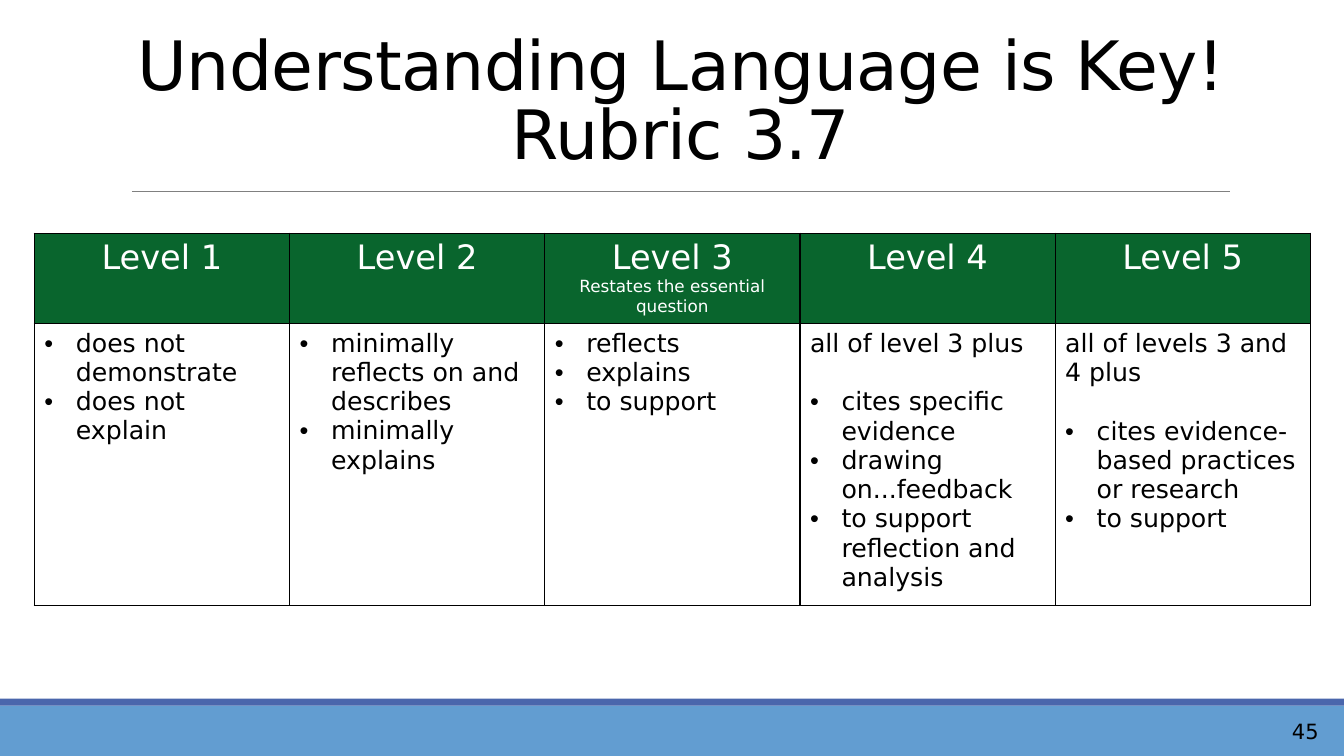
from dataclasses import dataclass

from lxml import etree
from pptx import Presentation
from pptx.dml.color import RGBColor
from pptx.enum.shapes import MSO_CONNECTOR, MSO_SHAPE
from pptx.enum.text import MSO_ANCHOR, PP_ALIGN
from pptx.oxml.ns import qn
from pptx.slide import Slide
from pptx.table import _Cell
from pptx.text.text import TextFrame, _Paragraph
from pptx.util import Pt

LEFT, CENTER, RIGHT = PP_ALIGN.LEFT, PP_ALIGN.CENTER, PP_ALIGN.RIGHT
MIDDLE, BOTTOM = MSO_ANCHOR.MIDDLE, MSO_ANCHOR.BOTTOM
RECTANGLE, STRAIGHT = MSO_SHAPE.RECTANGLE, MSO_CONNECTOR.STRAIGHT

FONT = "DejaVu Sans"
COLORS = {
    "text": "000000",
    "header_text": "FFFFFF",
    "header": "09652D",
    "border": "000000",
    "rule": "808080",
    "footer": "629DD1",
    "footer_edge": "4A66AC",
}
SLIDE_WIDTH, SLIDE_HEIGHT = 960, 540
TABLE_LEFT, TABLE_TOP = 24.5, 166.5
COLUMN_WIDTH = 182.3
ROW_HEIGHTS = (63, 195.5)
BULLET_INDENT = 22.5
BODY_LINE = 21


@dataclass(frozen=True)
class Box:
    left: float
    top: float
    width: float
    height: float

    def emu(self) -> tuple[Pt, Pt, Pt, Pt]:
        return Pt(self.left), Pt(self.top), Pt(self.width), Pt(self.height)


@dataclass(frozen=True)
class Level:
    heading: str
    bullets: tuple[str, ...]
    lead: str = ""
    note: str = ""


@dataclass(frozen=True)
class Band:
    box: Box
    color: str


BANDS = (
    Band(Box(0, 504, SLIDE_WIDTH, 36), "footer"),
    Band(Box(0, 499, SLIDE_WIDTH, 5), "footer_edge"),
)
LEVELS = (
    Level("Level 1", ("does not demonstrate", "does not explain")),
    Level("Level 2", ("minimally reflects on and describes", "minimally explains")),
    Level("Level 3", ("reflects", "explains", "to support"),
          note="Restates the essential question"),
    Level("Level 4", ("cites specific evidence", "drawing on...feedback",
                      "to support reflection and analysis"),
          lead="all of level 3 plus"),
    Level("Level 5", ("cites evidence-based practices or research", "to support"),
          lead="all of levels 3 and 4 plus"),
)


def rgb(color: str) -> RGBColor:
    return RGBColor.from_string(COLORS[color])


def write(frame: TextFrame, text: str, *, size: float = 18, color: str = "text",
          align: PP_ALIGN = LEFT, bullet: bool = False, line_spacing: float = 1.0,
          space_after: float = 0, tracking: float = 0) -> None:
    first: _Paragraph = frame.paragraphs[0]
    paragraph = frame.add_paragraph() if first.runs else first
    paragraph.text = text
    paragraph.alignment = align
    paragraph.line_spacing = line_spacing
    paragraph.space_after = Pt(space_after)
    for run in paragraph.runs:
        run.font.name = FONT
        run.font.size = Pt(size)
        run.font.color.rgb = rgb(color)
        if tracking:
            run._r.get_or_add_rPr().set("spc", str(round(tracking * 100)))
    if bullet:
        properties = paragraph._p.get_or_add_pPr()
        properties.set("marL", str(Pt(BULLET_INDENT)))
        properties.set("indent", str(-Pt(BULLET_INDENT)))
        etree.SubElement(properties, qn("a:buFont"), typeface="Arial")
        etree.SubElement(properties, qn("a:buChar"), char="•")


def add_text_frame(slide: Slide, box: Box, anchor: MSO_ANCHOR) -> TextFrame:
    frame = slide.shapes.add_textbox(*box.emu()).text_frame
    frame.word_wrap = True
    frame.vertical_anchor = anchor
    return frame


def draw_band(slide: Slide, band: Band) -> None:
    strip = slide.shapes.add_shape(RECTANGLE, *band.box.emu())
    strip.shadow.inherit = False
    strip.fill.solid()
    strip.fill.fore_color.rgb = rgb(band.color)
    strip.line.fill.background()


def draw_title_rule(slide: Slide) -> None:
    rule = slide.shapes.add_connector(STRAIGHT, Pt(94.3), Pt(136.8), Pt(878.8), Pt(136.8))
    rule.line.color.rgb = rgb("rule")
    rule.line.width = Pt(0.5)
    etree.SubElement(rule._element.spPr, qn("a:effectLst"))


def draw_borders(cell: _Cell) -> None:
    properties = cell._tc.get_or_add_tcPr()
    for side in ("lnL", "lnR", "lnT", "lnB"):
        border = etree.SubElement(properties, qn(f"a:{side}"), w=str(Pt(1)))
        fill = etree.SubElement(border, qn("a:solidFill"))
        etree.SubElement(fill, qn("a:srgbClr"), val=COLORS["border"])


def fill_level(heading: _Cell, criteria: _Cell, level: Level) -> None:
    draw_borders(heading)
    draw_borders(criteria)
    heading.fill.solid()
    heading.fill.fore_color.rgb = rgb("header")
    criteria.fill.background()
    write(heading.text_frame, level.heading, size=24, color="header_text", align=CENTER)
    if level.note:
        write(heading.text_frame, level.note, size=12, color="header_text", align=CENTER)
    if level.lead:
        write(criteria.text_frame, level.lead, space_after=BODY_LINE)
    for criterion in level.bullets:
        write(criteria.text_frame, criterion, bullet=True)


def draw_rubric(slide: Slide) -> None:
    box = Box(TABLE_LEFT, TABLE_TOP, COLUMN_WIDTH * len(LEVELS), sum(ROW_HEIGHTS))
    rubric = slide.shapes.add_table(len(ROW_HEIGHTS), len(LEVELS), *box.emu()).table
    rubric.first_row = False
    rubric.horz_banding = False
    for row, height in zip(rubric.rows, ROW_HEIGHTS):
        row.height = Pt(height)
    for index, level in enumerate(LEVELS):
        rubric.columns[index].width = Pt(COLUMN_WIDTH)
        fill_level(rubric.cell(0, index), rubric.cell(1, index), level)


def main() -> None:
    presentation = Presentation()
    presentation.slide_width = Pt(SLIDE_WIDTH)
    presentation.slide_height = Pt(SLIDE_HEIGHT)
    slide = presentation.slides.add_slide(presentation.slide_layouts[6])
    for band in BANDS:
        draw_band(slide, band)
    draw_title_rule(slide)
    title = add_text_frame(slide, Box(24.5, 22.3, 923.8, 105.1), BOTTOM)
    write(title, "Understanding Language is Key!\nRubric 3.7", size=48.6,
          align=CENTER, line_spacing=0.85, tracking=-0.5)
    draw_rubric(slide)
    page_number = add_text_frame(slide, Box(897, 506.2, 52, 31.7), MIDDLE)
    write(page_number, "45", size=15, align=RIGHT)
    presentation.save("out.pptx")


if __name__ == "__main__":
    main()
